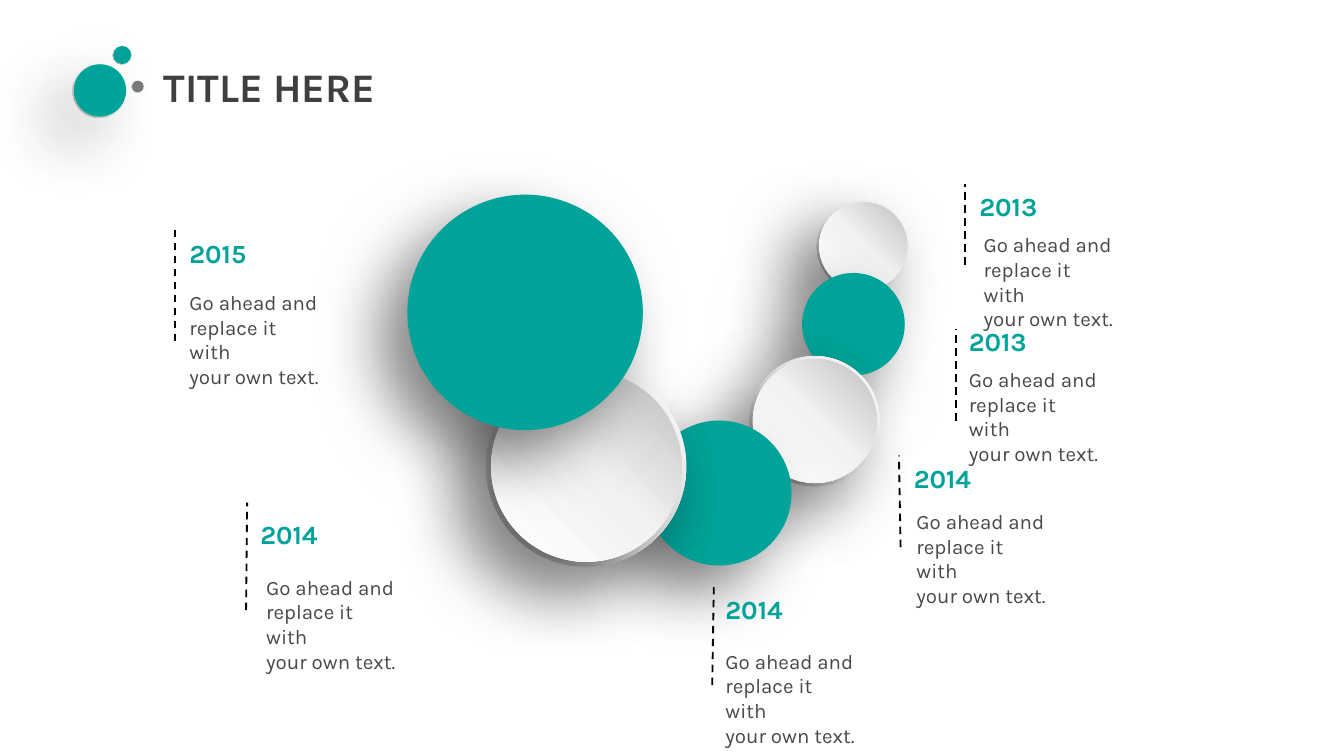
from copy import deepcopy
from typing import NamedTuple

from lxml.etree import SubElement
from pptx import Presentation
from pptx.dml.color import RGBColor
from pptx.enum.dml import MSO_LINE
from pptx.enum.shapes import MSO_CONNECTOR, MSO_SHAPE
from pptx.enum.text import MSO_AUTO_SIZE
from pptx.oxml.ns import qn
from pptx.util import Cm, Pt

COLORS = {
    "teal": "00A39A",
    "dot": "7B7B7B",
    "title": "3F3F3F",
    "body": "484848",
    "black": "000000",
}
RING_STOPS = [(0, "FFFFFF"), (0.55, "F2F2F2"), (1, "A5A5A5")]
DISK_STOPS = [(0, "FFFFFF"), (0.51, "F2F2F2"), (1, "BFBFBF")]
RIM = 0.024
BODY = "Go ahead and\nreplace it with\nyour own text."


class Milestone(NamedTuple):
    """A dashed line's box with the offsets of its year and text, in cm."""

    left: float
    top: float
    height: float
    lean: float
    year: str
    year_offset: tuple
    text_offset: tuple


MILESTONES = [
    Milestone(18.24, 3.48, 1.52, 0, "2013", (0.02, 0), (0.1, 0.79)),
    Milestone(18.06, 6.22, 1.73, 0, "2013", (0, -0.2), (0, 0.59)),
    Milestone(16.99, 8.61, 1.73, 0.03, "2014", (0.03, 0), (0.08, 0.89)),
    Milestone(13.49, 11.1, 1.85, -0.03, "2014", (-0.03, 0), (-0.03, 1.04)),
    Milestone(4.67, 9.5, 2.03, -0.02, "2014", (0, 0.18), (0.11, 1.24)),
    Milestone(3.3, 4.27, 2.18, 0, "2015", (0.03, 0.1), (0.03, 1.09)),
]


def apply_gradient(shape, stops, angle):
    """Fill a shape with a three-stop linear gradient."""
    shape.fill.gradient()
    shape.fill.gradient_angle = angle
    stop_list = shape._element.spPr.find(".//" + qn("a:gsLst"))
    stop_list.append(deepcopy(stop_list[-1]))
    for stop, (position, color) in zip(shape.fill.gradient_stops, stops):
        stop.position = position
        stop.color.rgb = RGBColor.from_string(color)


def apply_shadow(shape, opacity):
    """Give a shape a soft shadow towards the lower left."""
    shape.shadow.inherit = False
    effects = shape._element.spPr.find(qn("a:effectLst"))
    shadow = SubElement(
        effects, qn("a:outerShdw"), blurRad=str(Pt(35)), dist=str(Pt(20)),
        dir=str(135 * 60000), algn="tr", rotWithShape="0",
    )
    color = SubElement(shadow, qn("a:srgbClr"), val=COLORS["black"])
    SubElement(color, qn("a:alpha"), val=str(opacity * 1000))


def add_circle(slide, kind, left, top, size, opacity):
    """Add a borderless round shape with a shadow."""
    shape = slide.shapes.add_shape(kind, Cm(left), Cm(top), Cm(size), Cm(size))
    shape.line.fill.background()
    apply_shadow(shape, opacity)
    return shape


def add_disk(slide, left, top, size, color, opacity=50):
    """Add a plain coloured disk."""
    disk = add_circle(slide, MSO_SHAPE.OVAL, left, top, size, opacity)
    disk.fill.solid()
    disk.fill.fore_color.rgb = RGBColor.from_string(color)


def add_rimmed_disk(slide, left, top, size, color=None, opacity=50):
    """Add a disk inside a metallic ring, silver unless a colour is given."""
    ring = add_circle(slide, MSO_SHAPE.DONUT, left, top, size, opacity)
    ring.adjustments[0] = 0.049
    apply_gradient(ring, RING_STOPS, 225)
    inset = size * RIM
    inner = (left + inset, top + inset, size - 2 * inset)
    if color:
        add_disk(slide, *inner, color, opacity)
    else:
        disk = add_circle(slide, MSO_SHAPE.OVAL, *inner, opacity)
        apply_gradient(disk, DISK_STOPS, 45)


def add_text(slide, box, text, size, color, bold=False):
    """Add a wrapping text box and return its frame."""
    frame = slide.shapes.add_textbox(*(Cm(length) for length in box)).text_frame
    frame.word_wrap = True
    frame.text = text
    for paragraph in frame.paragraphs:
        for run in paragraph.runs:
            run.font.name = "Karla"
            run.font.size = Pt(size)
            run.font.bold = bold
            run.font.color.rgb = RGBColor.from_string(color)
    return frame


def add_header(slide, left, top):
    """Place the three-dot ornament and the title."""
    dots = [
        (0.76, 0, 0.36, COLORS["teal"]),
        (1.12, 0.66, 0.23, COLORS["dot"]),
        (0, 0.33, 1.04, COLORS["teal"]),
    ]
    for offset_x, offset_y, size, color in dots:
        add_rimmed_disk(slide, left + offset_x, top + offset_y, size, color, 24)
    box = (left + 1.55, top + 0.21, 8.61, 1.12)
    frame = add_text(slide, box, "TITLE HERE", 21.7, COLORS["title"], True)
    frame.margin_left = frame.margin_right = Cm(0.18)
    frame.margin_top = frame.margin_bottom = Cm(0.1)


def add_chain(slide, left, top):
    """Place the overlapping disks, alternating silver and teal."""
    disks = [
        (7.74, 0.1, 1.75),
        (7.46, 1.48, 1.94),
        (6.47, 3.05, 2.46),
        (4.52, 4.27, 2.74),
        (1.49, 3.25, 3.78),
        (0, 0, 4.45),
    ]
    for index, (offset_x, offset_y, size) in enumerate(disks):
        place = (left + offset_x, top + offset_y, size)
        if index % 2:
            add_disk(slide, *place, COLORS["teal"])
        else:
            add_rimmed_disk(slide, *place)


def add_milestone(slide, milestone):
    """Place a dashed line with its year and text."""
    left, top, height, lean, year, year_offset, text_offset = milestone
    labels = [
        (text_offset, (2.97, 1.68), BODY, 11, COLORS["body"], False),
        (year_offset, (1.72, 0.86), year, 14, COLORS["teal"], True),
    ]
    for offset, extent, *style in labels:
        box = (left + offset[0], top + offset[1], *extent)
        frame = add_text(slide, box, *style)
        frame.auto_size = MSO_AUTO_SIZE.SHAPE_TO_FIT_TEXT
    line = slide.shapes.add_connector(
        MSO_CONNECTOR.STRAIGHT, Cm(left + lean), Cm(top + height), Cm(left), Cm(top)
    )
    line.line.color.rgb = RGBColor.from_string(COLORS["black"])
    line.line.width = Pt(1)
    line.line.dash_style = MSO_LINE.DASH
    SubElement(line._element.spPr, qn("a:effectLst"))


def main():
    """Build the timeline slide and save it."""
    presentation = Presentation()
    presentation.slide_width = Cm(25.4)
    presentation.slide_height = Cm(14.29)
    slide = presentation.slides.add_slide(presentation.slide_layouts[6])
    add_header(slide, 1.37, 0.86)
    add_chain(slide, 7.7, 3.68)
    for milestone in MILESTONES:
        add_milestone(slide, milestone)
    presentation.save("out.pptx")


if __name__ == "__main__":
    main()
